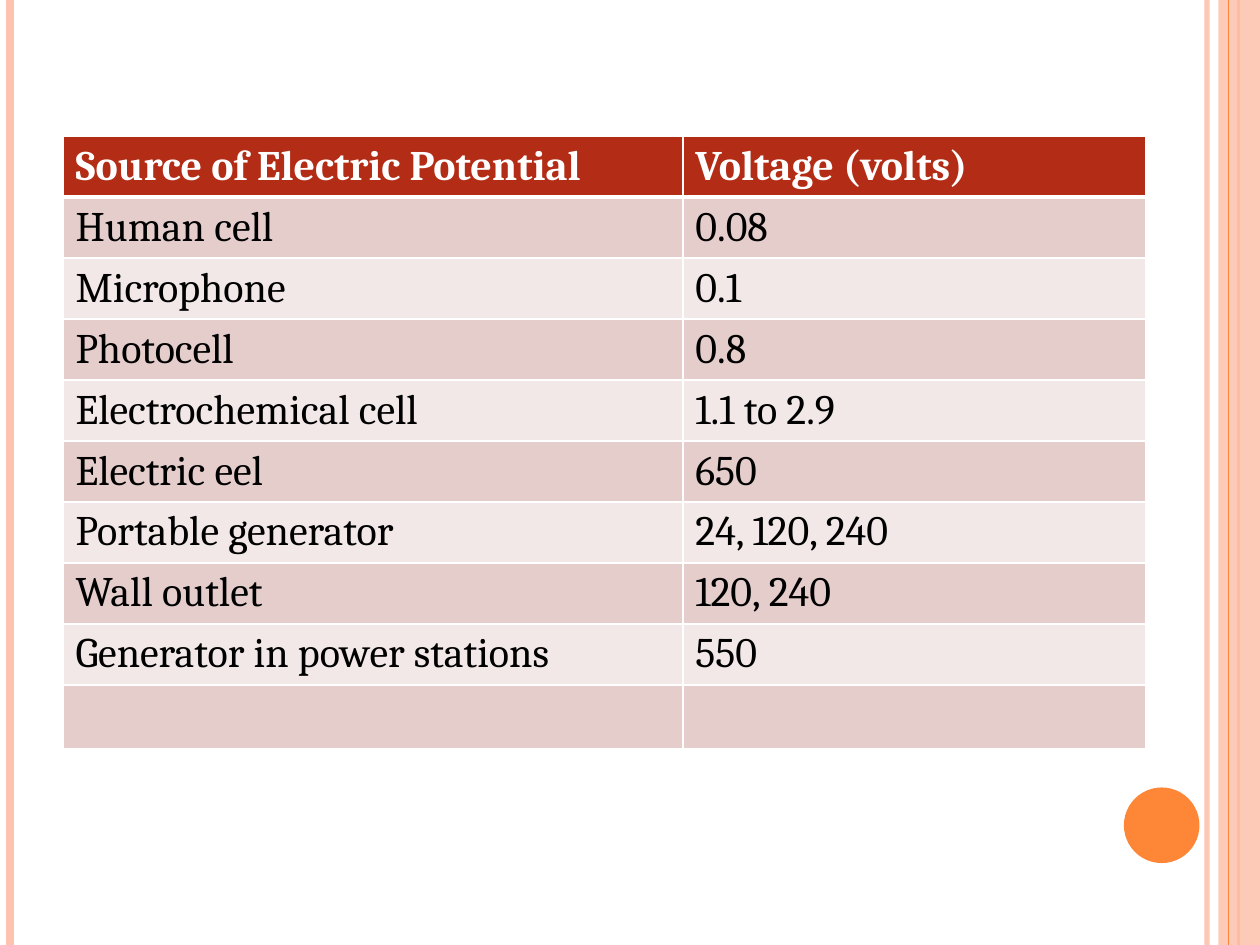
from lxml.etree import SubElement
from pptx import Presentation
from pptx.dml.color import RGBColor
from pptx.enum.shapes import MSO_CONNECTOR as Connector, MSO_SHAPE as Shape
from pptx.oxml.ns import qn
from pptx.util import Inches, Pt

WIDTH, HEIGHT = 10, 7.5
FONT = "Cambria"
PEACH, ORANGE, WHITE, BLACK = "FEC3AE", "FE8637", "FFFFFF", "000000"
HEADER, BANDS = "B32C16", ("E5CDCC", "F2E8E8")
COLUMN_WIDTHS, ROW_HEIGHT = (4.92, 3.67), 0.48
ROWS = [
    ("Source of Electric Potential", "Voltage (volts)"),
    ("Human cell", "0.08"),
    ("Microphone", "0.1"),
    ("Photocell", "0.8"),
    ("Electrochemical cell", "1.1 to 2.9"),
    ("Electric eel", "650"),
    ("Portable generator", "24, 120, 240"),
    ("Wall outlet", "120, 240"),
    ("Generator in power stations", "550"),
    ("", ""),
]


def color(code):
    return RGBColor.from_string(code)


def set_alpha(fill_parent, percent):
    """Make the solid colour below an element partly transparent."""
    tint = next(fill_parent.iter(qn("a:srgbClr")))
    SubElement(tint, qn("a:alpha"), val=str(percent * 1000))


def add_rule(page, x, code, weight, alpha=100):
    """Draw a full-height vertical line."""
    rule = page.shapes.add_connector(
        Connector.STRAIGHT, Inches(x), 0, Inches(x), Inches(HEIGHT))
    rule.line.color.rgb = color(code)
    rule.line.width = Pt(weight)
    properties = rule._element.spPr
    if alpha < 100:
        set_alpha(properties, alpha)
    SubElement(properties, qn("a:effectLst"))


def add_solid(page, kind, left, top, width, height, code, alpha=100):
    solid = page.shapes.add_shape(
        kind, Inches(left), Inches(top), Inches(width), Inches(height))
    solid.shadow.inherit = False
    solid.fill.solid()
    solid.fill.fore_color.rgb = color(code)
    solid.line.fill.background()
    if alpha < 100:
        set_alpha(solid._element.spPr, alpha)


def write(frame, text, size=24, code=BLACK, bold=False):
    para = frame.paragraphs[0]
    para.font.size = Pt(size)
    if text:
        span = para.add_run()
        span.text = text
        span.font.name, span.font.size = FONT, Pt(size)
        span.font.bold, span.font.color.rgb = bold, color(code)


def set_borders(cell, bottom=1):
    """Put white borders before the fill, as the schema orders them."""
    properties = cell._tc.get_or_add_tcPr()
    weights = {"a:lnL": 1, "a:lnR": 1, "a:lnT": 1, "a:lnB": bottom}
    for index, (tag, weight) in enumerate(weights.items()):
        border = SubElement(properties, qn(tag), w=str(Pt(weight)))
        fill = SubElement(border, qn("a:solidFill"))
        SubElement(fill, qn("a:srgbClr"), val=WHITE)
        properties.insert(index, border)


def add_voltage_table(page, left, top):
    table = page.shapes.add_table(
        len(ROWS), len(COLUMN_WIDTHS), Inches(left), Inches(top),
        Inches(sum(COLUMN_WIDTHS)), Inches(ROW_HEIGHT * len(ROWS))).table
    for column, width in zip(table.columns, COLUMN_WIDTHS):
        column.width = Inches(width)
    for r, texts in enumerate(ROWS):
        table.rows[r].height = Inches(ROW_HEIGHT)
        is_header = r == 0
        for c, text in enumerate(texts):
            cell = table.cell(r, c)
            cell.fill.solid()
            cell.fill.fore_color.rgb = color(
                HEADER if is_header else BANDS[(r - 1) % 2])
            # The rule under the header is shared with the first body row
            set_borders(cell, bottom=3 if is_header else 1)
            if r == 1:
                cell._tc.tcPr.find(qn("a:lnT")).set("w", str(Pt(3)))
            write(cell.text_frame, text, bold=is_header,
                  code=WHITE if is_header else BLACK)


def main():
    deck = Presentation()
    deck.slide_width, deck.slide_height = Inches(WIDTH), Inches(HEIGHT)
    page = deck.slides.add_slide(deck.slide_layouts[6])

    # Side decoration
    add_rule(page, 9.58, PEACH, 3, alpha=93)
    add_rule(page, 0.08, PEACH, 4.5)
    add_rule(page, 9.83, ORANGE, 1.5)
    add_solid(page, Shape.RECTANGLE, 9.67, 0, 0.33, HEIGHT, PEACH, alpha=87)
    add_rule(page, 9.75, ORANGE, 0.75)
    add_solid(page, Shape.OVAL, 8.92, 6.25, 0.6, 0.6, ORANGE)

    # Voltages by source
    add_voltage_table(page, 0.5, 1.08)
    deck.save("out.pptx")


if __name__ == "__main__":
    main()
